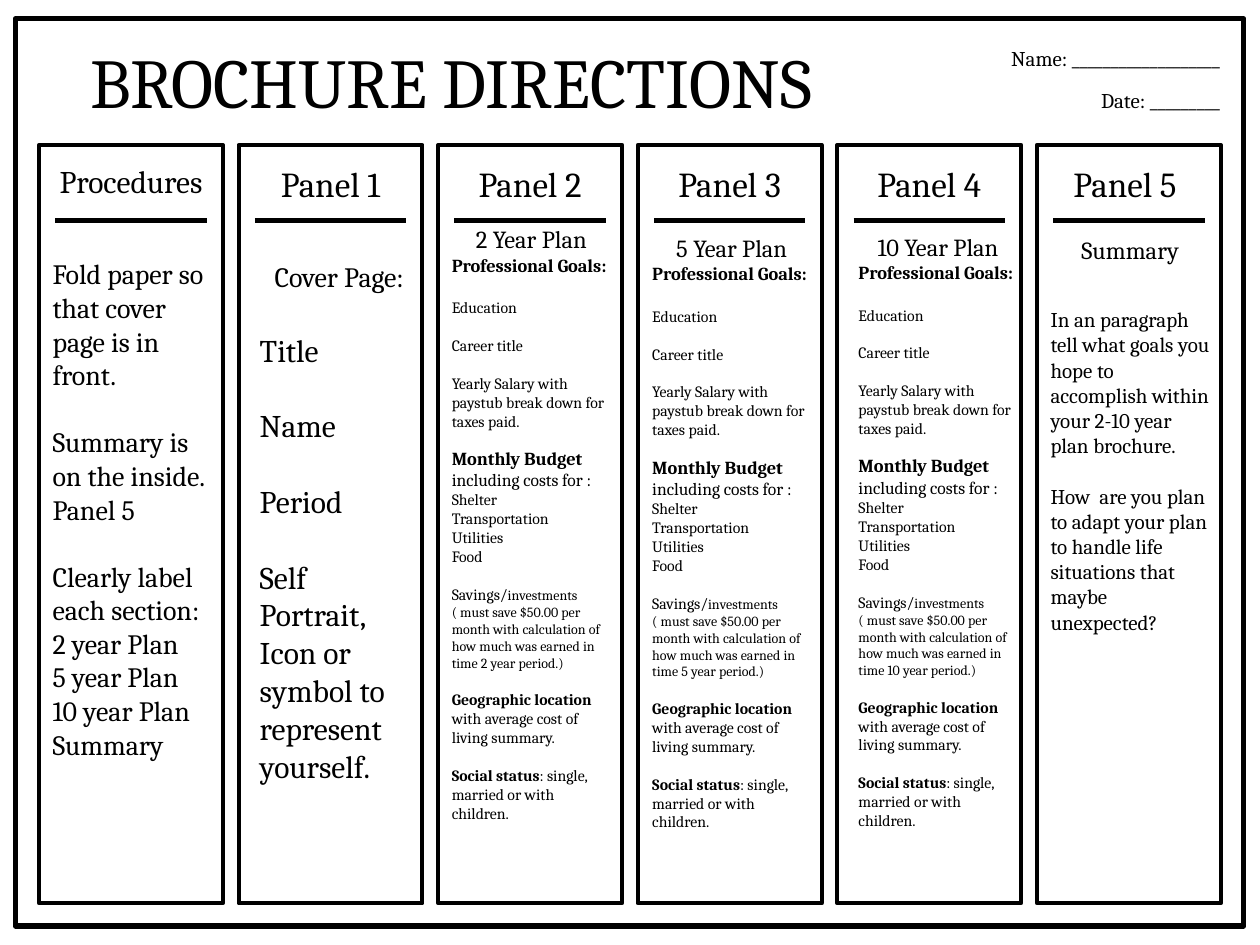
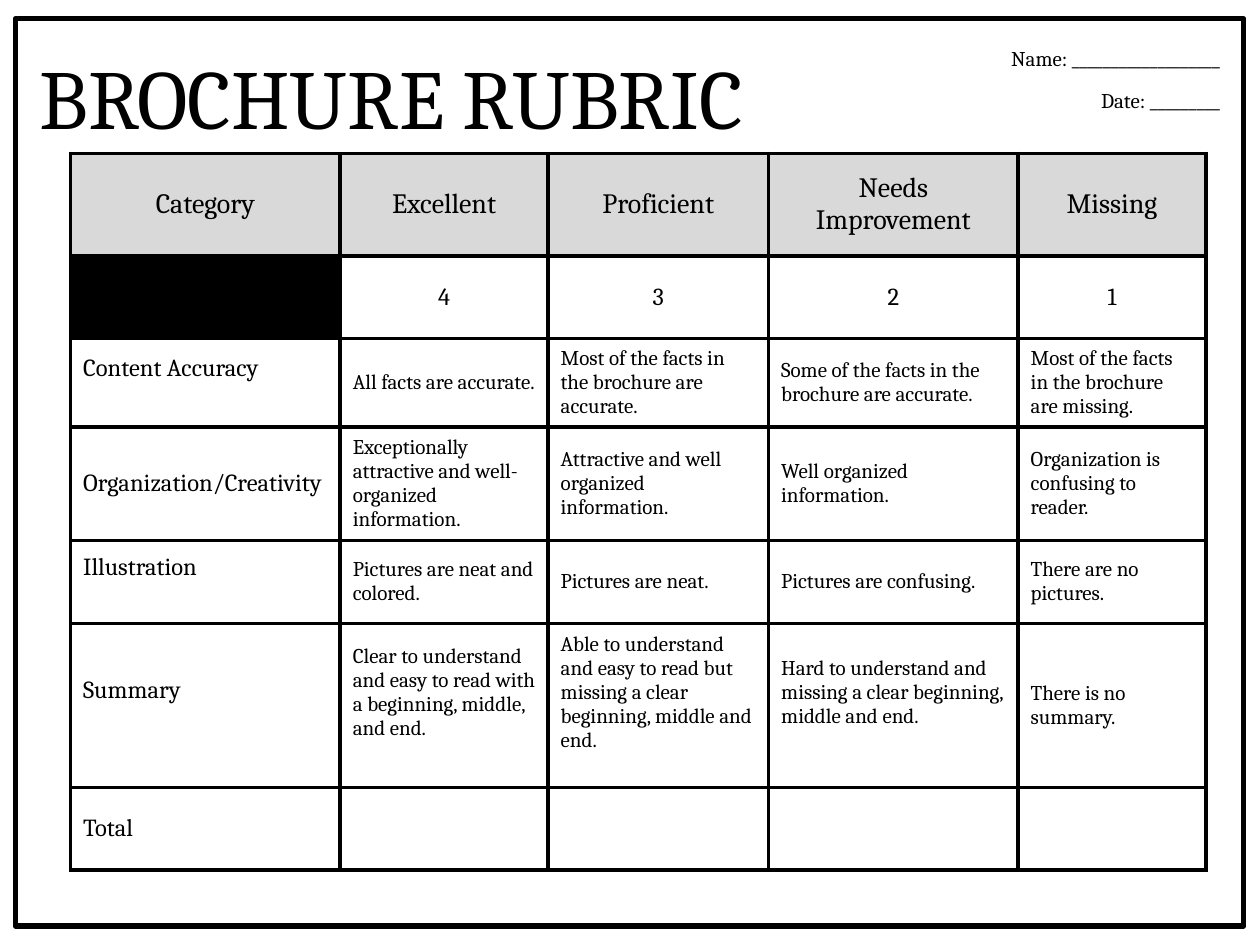
from lxml.etree import SubElement
from pptx import Presentation
from pptx.dml.color import RGBColor
from pptx.enum.shapes import MSO_CONNECTOR, MSO_SHAPE
from pptx.enum.text import MSO_ANCHOR, MSO_AUTO_SIZE, PP_ALIGN
from pptx.oxml.ns import qn
from pptx.util import Pt

COLORS = {"ink": "000000", "paper": "FFFFFF", "header": "D9D9D9"}
FONT = "Cambria"
LINE_FACTOR = 1.2
LEFT, CENTER, RIGHT = PP_ALIGN.LEFT, PP_ALIGN.CENTER, PP_ALIGN.RIGHT


def line(text, size, gap=0, align=LEFT, bold=False):
    return [(text, size, bold)], gap, align


def year_plan(years):
    return [
        line(f"{years} Year Plan", 14, align=CENTER),
        line("Professional Goals:", 10.5, bold=True),
        line("Education", 9, 10.5),
        line("Career title", 9, 9),
        line("Yearly Salary with paystub break down for taxes paid.", 9, 9),
        line("Monthly Budget", 10.5, 8, bold=True),
        line("including costs for :", 10),
        *[line(cost, 9) for cost in ("Shelter", "Transportation", "Utilities", "Food")],
        ([("Savings/", 9, False), ("investments", 8, False)], 9, LEFT),
        line("( must save $50.00 per month with calculation of how much was "
             f"earned in time {years} year period.)", 8),
        ([("Geographic location ", 9, True),
          ("with average cost of living summary.", 9, False)], 9, LEFT),
        ([("Social status", 9, True),
          (": single, married or with children.", 9, False)], 9, LEFT),
    ]


STUDENT_LINES = [line("Name: " + "_" * 19, 12, align=RIGHT),
                 line("Date: " + "_" * 9, 12, 8, RIGHT)]

PROCEDURES = [
    line("Fold paper so that cover page is in front.", 16),
    line("Summary is on the inside. Panel 5", 16, 16),
    line("Clearly label each section:", 16, 16),
    *[line(label, 16) for label in
      ("2 year Plan", "5 year Plan", "10 year Plan", "Summary")],
]
COVER = [
    line("Cover Page:", 16, align=CENTER),
    *[line(item, 18, 18) for item in
      ("Title", "Name", "Period",
       "Self Portrait, Icon or symbol to represent yourself.")],
]
SUMMARY = [
    line("Summary", 14, align=CENTER),
    line("In an paragraph tell what goals you hope to accomplish within "
         "your 2-10 year plan brochure.", 12, 20),
    line("How  are you plan to adapt your plan to handle life situations "
         "that maybe unexpected?", 12, 12),
]

# heading, heading size, body, body indent, body top, body height
PANELS = [
    ("Procedures", 18, PROCEDURES, 0.7, 143.3, 337),
    ("Panel 1", 20, COVER, 5, 144.7, 310.3),
    ("Panel 2", 20, year_plan(2), 0.7, 124.6, 375.8),
    ("Panel 3", 20, year_plan(5), 1.2, 129.6, 375.8),
    ("Panel 4", 20, year_plan(10), 5, 128.9, 375.8),
    ("Panel 5 ", 20, SUMMARY, 0.7, 131, 266.4),
]
PANEL_LEFT, PANEL_PITCH, PANEL_TOP = 22.3, 114.05, 82.8
PANEL_WIDTH, PANEL_HEIGHT = 105.1, 433.4
RULE_INSET, RULE_Y = 9.3, 126

RUBRIC = [
    ["Category", "Excellent", "Proficient", "Needs Improvement", "Missing"],
    ["", "4", "3", "2", "1"],
    ["Content Accuracy", "All facts are accurate.",
     "Most of the facts in the brochure are accurate.",
     "Some of the facts in the brochure are accurate.",
     "Most of the facts in the brochure are missing."],
    ["Organization/Creativity",
     "Exceptionally attractive and well-organized information.",
     "Attractive and well organized information.",
     "Well organized information.", "Organization is confusing to reader."],
    ["Illustration", "Pictures are neat and colored.", "Pictures are neat.",
     "Pictures are confusing.", "There are no pictures."],
    ["Summary",
     "Clear to understand and easy to read with a beginning, middle, and end.",
     "Able to understand and easy to read but missing a clear beginning, "
     "middle and end.",
     "Hard to understand and missing a clear beginning, middle and end.",
     "There is no summary."],
    ["Total", "", "", "", ""],
]
RUBRIC_WIDTHS = [154.1, 118.8, 126, 142.6, 107.3]
RUBRIC_HEIGHTS = [58.6, 47.4, 48.6, 62.3, 47.4, 90.3, 47.4]
RAISED = {(2, 0), (4, 0), (5, 0), (5, 1), (5, 2), (5, 3)}


def color(key):
    return RGBColor.from_string(COLORS[key])


def apply(target, values):
    for attribute, value in values.items():
        setattr(target, attribute, value)


def paint(target, key):
    target.fill.solid()
    target.fill.fore_color.rgb = color(key)


def write(frame, paragraphs):
    for index, (runs, gap, align) in enumerate(paragraphs):
        paragraph = frame.add_paragraph() if index else frame.paragraphs[0]
        apply(paragraph, {"alignment": align, "space_before": Pt(gap * LINE_FACTOR)})
        for text, size, bold in runs:
            run = paragraph.add_run()
            run.text = text
            apply(run.font, {"name": FONT, "size": Pt(size), "bold": bold})
            run.font.color.rgb = color("ink")


def add_text(slide, left, top, width, height, paragraphs):
    frame = slide.shapes.add_textbox(Pt(left), Pt(top), Pt(width), Pt(height)).text_frame
    apply(frame, {"word_wrap": True, "auto_size": MSO_AUTO_SIZE.SHAPE_TO_FIT_TEXT})
    write(frame, paragraphs)


def add_frame(slide, left, top, width, height, weight):
    frame = slide.shapes.add_shape(MSO_SHAPE.RECTANGLE, Pt(left), Pt(top),
                                   Pt(width), Pt(height))
    frame.shadow.inherit = False
    paint(frame, "paper")
    frame.line.color.rgb = color("ink")
    frame.line.width = Pt(weight)


def add_rule(slide, left, right, y):
    rule = slide.shapes.add_connector(MSO_CONNECTOR.STRAIGHT, Pt(left), Pt(y),
                                      Pt(right), Pt(y))
    rule.line.color.rgb = color("ink")
    rule.line.width = Pt(3)
    SubElement(rule._element.spPr, qn("a:effectLst"))


def add_page(deck):
    slide = deck.slides.add_slide(deck.slide_layouts[6])
    add_frame(slide, 8.8, 10.8, 702, 518.4, 3)
    add_text(slide, 426.2, 22.3, 278, 46, STUDENT_LINES)
    return slide


def add_panels(slide):
    for index, (heading, size, body, indent, top, height) in enumerate(PANELS):
        left = PANEL_LEFT + index * PANEL_PITCH
        add_frame(slide, left, PANEL_TOP, PANEL_WIDTH, PANEL_HEIGHT, 2.25)
        add_text(slide, left, 89.3, PANEL_WIDTH, size * 1.6,
                 [line(heading, size, align=CENTER)])
        add_rule(slide, left + RULE_INSET, left + PANEL_WIDTH - RULE_INSET, RULE_Y)
        add_text(slide, left + indent, top, PANEL_WIDTH, height, body)


def add_borders(cell):
    properties = cell._tc.get_or_add_tcPr()
    for position, side in enumerate(("lnL", "lnR", "lnT", "lnB")):
        border = SubElement(properties, qn(f"a:{side}"), w=str(Pt(2.25)))
        fill = SubElement(border, qn("a:solidFill"))
        SubElement(fill, qn("a:srgbClr"), val=COLORS["ink"])
        properties.insert(position, border)


def add_rubric(slide):
    rubric = slide.shapes.add_table(
        len(RUBRIC), len(RUBRIC_WIDTHS), Pt(40.3), Pt(87.6),
        Pt(sum(RUBRIC_WIDTHS)), Pt(sum(RUBRIC_HEIGHTS))).table
    apply(rubric, {"first_row": False, "horz_banding": False})
    for column, width in zip(rubric.columns, RUBRIC_WIDTHS):
        column.width = Pt(width)
    for row, height in zip(rubric.rows, RUBRIC_HEIGHTS):
        row.height = Pt(height)
    for r, texts in enumerate(RUBRIC):
        for c, text in enumerate(texts):
            cell = rubric.cell(r, c)
            cell.vertical_anchor = MSO_ANCHOR.MIDDLE
            size = 16 if r == 0 else 14 if r == 1 or c == 0 else 12
            if (r, c) in RAISED:
                cell.margin_bottom = Pt(3.6 + size * LINE_FACTOR)
            if text:
                write(cell.text_frame,
                      [line(text, size, align=CENTER if r < 2 else LEFT)])
            paint(cell, "header" if r == 0 else "ink" if (r, c) == (1, 0) else "paper")
            add_borders(cell)


def main():
    deck = Presentation()
    apply(deck, {"slide_width": Pt(720), "slide_height": Pt(540)})

    directions = add_page(deck)
    add_text(directions, 0, 18.7, 515.5, 55.4,
             [line("BROCHURE DIRECTIONS", 40, align=CENTER)])
    add_panels(directions)

    rubric = add_page(deck)
    add_rubric(rubric)
    add_text(rubric, 15.8, 22.3, 515.5, 65.5, [line("BROCHURE RUBRIC", 48)])

    deck.save("out.pptx")


if __name__ == "__main__":
    main()
